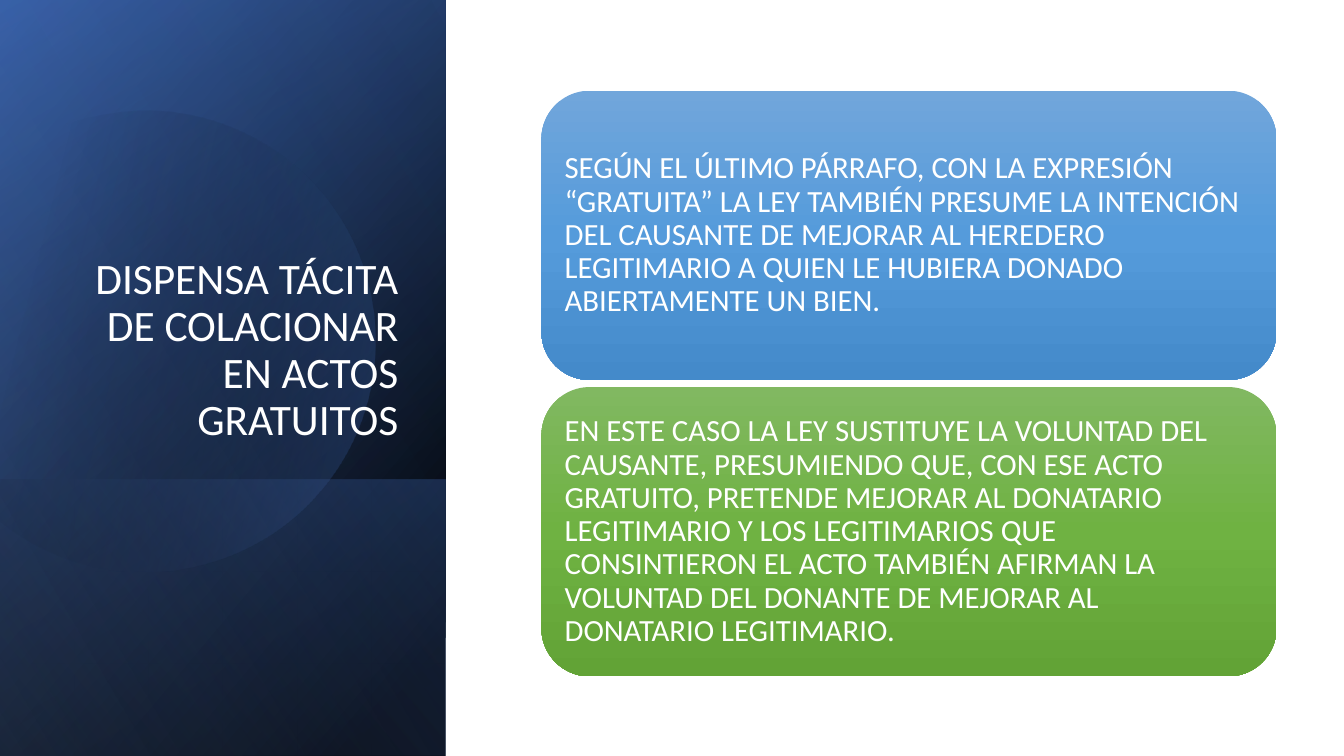
from math import cos, radians, sin

from lxml import etree
from pptx import Presentation
from pptx.dml.color import RGBColor
from pptx.enum.shapes import MSO_SHAPE
from pptx.enum.text import MSO_ANCHOR, MSO_AUTO_SIZE, PP_ALIGN
from pptx.oxml.ns import qn
from pptx.util import Inches, Pt

RECT, ROUND = MSO_SHAPE.RECTANGLE, MSO_SHAPE.ROUNDED_RECTANGLE
LEFT, RIGHT = PP_ALIGN.LEFT, PP_ALIGN.RIGHT
MIDDLE, BOTTOM = MSO_ANCHOR.MIDDLE, MSO_ANCHOR.BOTTOM
NO_FIT = MSO_AUTO_SIZE.NONE

COLORS = {
    "white": "FFFFFF", "black": "000000", "navy": "2F5597",
    "blue": "4472C4", "pale": "8FAADC",
    "sky": ("71A6DB", "559BDB", "448ACA"),
    "leaf": ("81B861", "6FB242", "62A336"),
}
FONT = "Calibri"
TITLE = "DISPENSA TÁCITA DE COLACIONAR EN ACTOS GRATUITOS"
CARDS = [
    ("sky", "SEGÚN EL ÚLTIMO PÁRRAFO, CON LA EXPRESIÓN “GRATUITA” LA LEY "
            "TAMBIÉN PRESUME LA INTENCIÓN DEL CAUSANTE DE MEJORAR AL HEREDERO "
            "LEGITIMARIO A QUIEN LE HUBIERA DONADO ABIERTAMENTE UN BIEN."),
    ("leaf", "EN ESTE CASO LA LEY SUSTITUYE LA VOLUNTAD DEL CAUSANTE, "
             "PRESUMIENDO QUE, CON ESE ACTO GRATUITO, PRETENDE MEJORAR AL "
             "DONATARIO LEGITIMARIO Y LOS LEGITIMARIOS QUE CONSINTIERON EL "
             "ACTO TAMBIÉN AFIRMAN LA VOLUNTAD DEL DONANTE DE MEJORAR AL "
             "DONATARIO LEGITIMARIO."),
]
TILT = 16.1
DISC = [
    ("moveTo", [(1.49, 1.1)]),
    ("cubicBezTo", [(2.46, 1.12), (3.35, 1.77), (3.63, 2.75)]),
    ("cubicBezTo", [(3.98, 3.97), (3.28, 5.23), (2.07, 5.58)]),
    ("cubicBezTo", [(1.31, 5.8), (0.53, 5.61), (-0.03, 5.14)]),
    ("lnTo", [(-0.15, 5.03)]),
    ("lnTo", [(-0.15, 1.75)]),
    ("lnTo", [(0, 1.61)]),
    ("cubicBezTo", [(0.23, 1.42), (0.5, 1.28), (0.8, 1.19)]),
    ("cubicBezTo", [(1.03, 1.13), (1.26, 1.1), (1.49, 1.1)]),
    ("close", []),
]


def shade(shape, stops, angle):
    shape.shadow.inherit = False
    shape.line.fill.background()
    shape.fill.gradient()
    grad = shape._element.spPr.find(qn("a:gradFill"))
    grad.set("rotWithShape", "1")
    for child in list(grad):
        grad.remove(child)
    items = etree.SubElement(grad, qn("a:gsLst"))
    for place, color, alpha in stops:
        stop = etree.SubElement(items, qn("a:gs"), pos=str(place * 1000))
        tone = etree.SubElement(stop, qn("a:srgbClr"), val=color)
        if alpha < 100:
            etree.SubElement(tone, qn("a:alpha"), val=str(alpha * 1000))
    etree.SubElement(grad, qn("a:lin"), ang=str(angle * 60000), scaled="0")


def write(frame, text, size, align, anchor):
    frame.word_wrap = True
    frame.auto_size = NO_FIT
    frame.vertical_anchor = anchor
    para = frame.paragraphs[0]
    para.alignment = align
    para.line_spacing = 0.9
    run = para.add_run()
    run.text = text
    run.font.name = FONT
    run.font.size = Pt(size)
    run.font.color.rgb = RGBColor.from_string(COLORS["white"])


def add_layer(slide, box, stops, angle):
    left, top, width, height = box
    shape = slide.shapes.add_shape(
        RECT, Inches(left + (width - height) / 2),
        Inches(top + (height - width) / 2), Inches(height), Inches(width))
    shape.rotation = 90
    shape._element.spPr.find(qn("a:xfrm")).set("flipH", "1")
    shade(shape, stops, angle)


def add_disc(slide, left, top, width, height):
    form = slide.shapes.build_freeform(Inches(left), Inches(top))
    form.add_line_segments([(Inches(left + width), Inches(top + height))])
    shape = form.convert_to_shape()
    shape.rotation = 360 - TILT
    outline = next(shape._element.iter(qn("a:path")))
    for child in list(outline):
        outline.remove(child)
    turn = radians(TILT)
    for verb, points in DISC:
        step = etree.SubElement(outline, qn("a:" + verb))
        for x, y in points:
            dx, dy = x - left - width / 2, y - top - height / 2
            across = width / 2 + dx * cos(turn) - dy * sin(turn)
            down = height / 2 + dx * sin(turn) + dy * cos(turn)
            etree.SubElement(step, qn("a:pt"), x=str(int(Inches(across))),
                             y=str(int(Inches(down))))
    shade(shape, [(29, COLORS["black"], 0), (100, COLORS["blue"], 43)], 30)


def add_panel(slide, left, top, width, height):
    box = left, top, width, height
    black, blue = COLORS["black"], COLORS["blue"]
    base = 2.74
    add_layer(slide, box, [(8, black, 100), (100, COLORS["navy"], 100)], 50)
    add_layer(slide, box, [(0, black, 0), (99, blue, 46)], 30)
    add_layer(slide, (left, top + height - base, width, base),
              [(2, blue, 29), (100, black, 30)], 130)
    add_disc(slide, left - 0.55, top + 1.06, 4.27, 4.57)
    add_layer(slide, box, [(0, black, 0), (99, COLORS["pale"], 11)], 120)
    title = slide.shapes.title
    title.left, title.top = Inches(left + 0.64), Inches(top + 1.84)
    title.width, title.height = Inches(3.41), Inches(2.62)
    write(title.text_frame, TITLE, 31, RIGHT, BOTTOM)
    slide.shapes._spTree.append(title._element)


def add_cards(slide, left, top, width, height):
    gap = 0.07
    tall = (height - gap * (len(CARDS) - 1)) / len(CARDS)
    for row, (tint, text) in enumerate(CARDS):
        card = slide.shapes.add_shape(
            ROUND, Inches(left), Inches(top + row * (tall + gap)),
            Inches(width), Inches(tall))
        shade(card, [(50 * i, c, 100) for i, c in enumerate(COLORS[tint])], 90)
        frame = card.text_frame
        frame.margin_left = frame.margin_right = Inches(0.09)
        frame.margin_top = frame.margin_bottom = Inches(0.09)
        write(frame, text, 22, LEFT, MIDDLE)


def main():
    deck = Presentation()
    deck.slide_width, deck.slide_height = Inches(13.33), Inches(7.5)
    slide = deck.slides.add_slide(deck.slide_layouts[5])
    add_panel(slide, 0, 0, 4.42, 7.5)
    add_cards(slide, 5.37, 0.9, 7.29, 5.81)
    deck.save("out.pptx")


if __name__ == "__main__":
    main()
